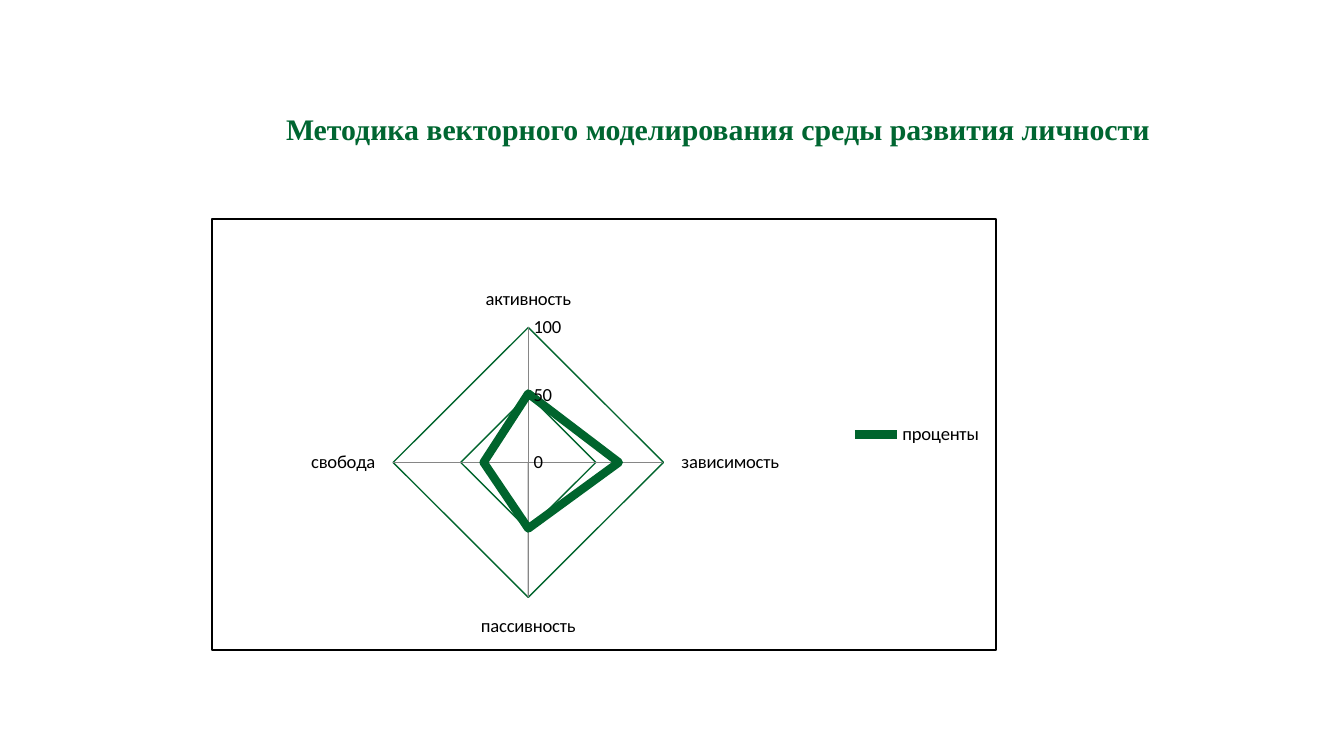
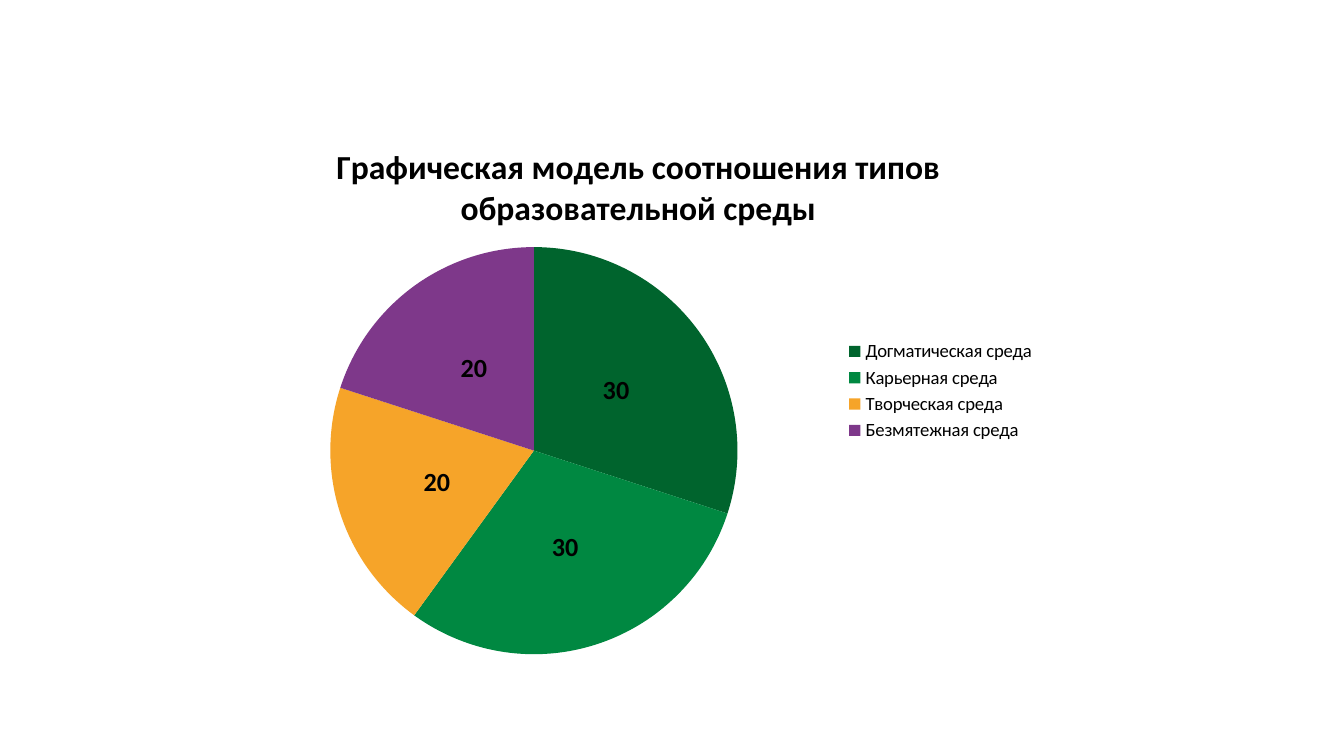
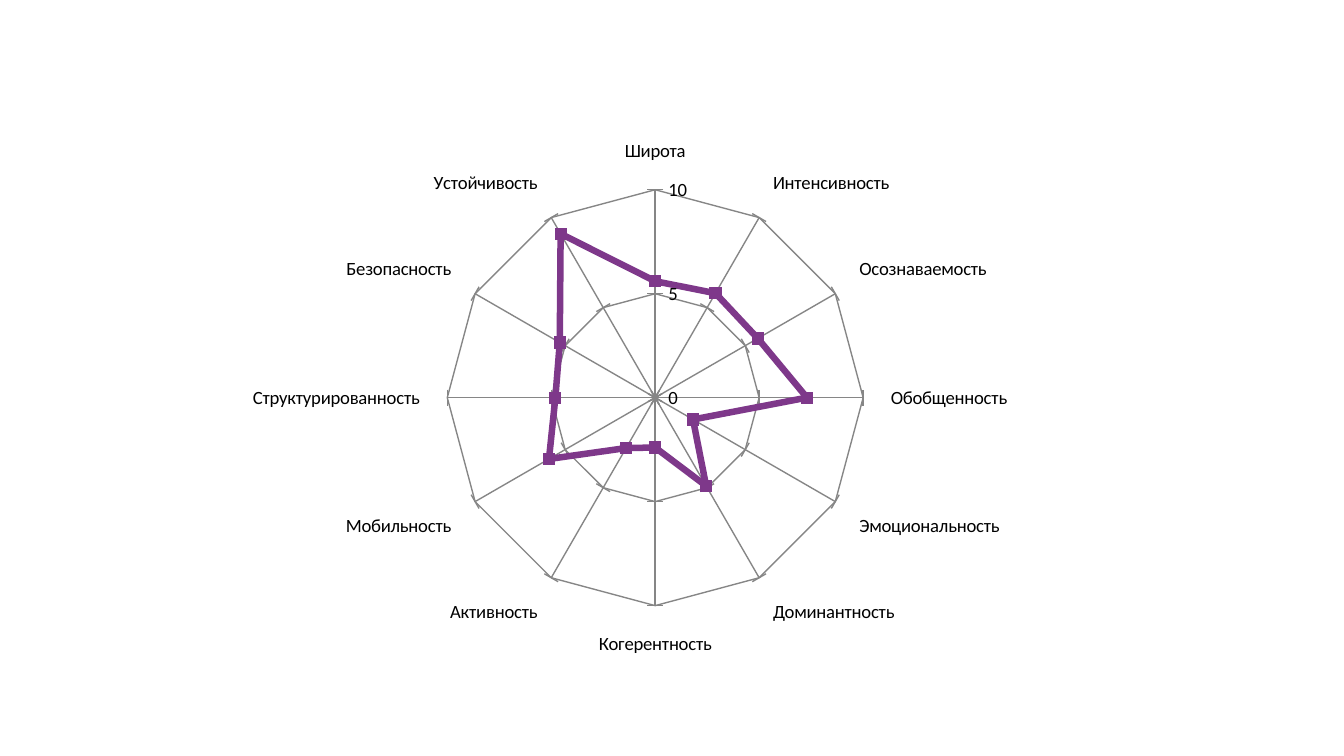
from lxml.etree import SubElement
from pptx import Presentation
from pptx.chart.data import CategoryChartData
from pptx.dml.color import RGBColor
from pptx.enum.chart import (XL_CHART_TYPE, XL_LABEL_POSITION, XL_LEGEND_POSITION,
                             XL_MARKER_STYLE, XL_TICK_MARK)
from pptx.enum.text import MSO_ANCHOR, MSO_AUTO_SIZE, PP_ALIGN
from pptx.oxml import parse_xml
from pptx.oxml.ns import nsdecls, qn
from pptx.util import Pt

EMU_PER_PX = 914400 / 134.4
TITLE_ONLY, BLANK = 5, 6

TITLE_FONT, CHART_FONT = "Times New Roman", "Calibri"
TITLE_GREEN = "006631"
BLACK, GRAY = "000000", "868686"
DARK_GREEN, GREEN, ORANGE, PURPLE = "00642D", "008841", "F6A429", "7E388A"


def px(length):
    return round(length * EMU_PER_PX)


def color(hex_string):
    return RGBColor.from_string(hex_string)


def format_line(line, hex_string, width):
    line.color.rgb = color(hex_string)
    line.width = Pt(width)


def set_layout(parent, **fractions):
    """Place a chart part by fractions of the chart (x, y and optionally w, h)."""
    layout = parent.find(qn("c:layout"))
    if layout is None:
        layout = parse_xml(f"<c:layout {nsdecls('c')}/>")
        parent.insert(0, layout)
    manual = SubElement(layout, qn("c:manualLayout"))
    if "w" in fractions:
        SubElement(manual, qn("c:layoutTarget")).set("val", "inner")
    for axis in "xy":
        SubElement(manual, qn(f"c:{axis}Mode")).set("val", "edge")
    for name, value in fractions.items():
        SubElement(manual, qn(f"c:{name}")).set("val", f"{value:.3f}")


def set_frame(chart, border):
    if border:
        line = (f'<a:ln w="{Pt(1)}"><a:solidFill><a:srgbClr val="{border}"/>'
                "</a:solidFill></a:ln>")
    else:
        line = "<a:ln><a:noFill/></a:ln>"
    properties = parse_xml(f"<c:spPr {nsdecls('c', 'a')}><a:noFill/>{line}</c:spPr>")
    chart.element.find(qn("c:chart")).addnext(properties)


def add_chart(slide, chart_type, box, plot_box, name, values, legend=False, border=None):
    """Add a one-series chart; plot_box is relative to the corner of box."""
    data = CategoryChartData()
    data.categories = list(values)
    data.add_series(name, list(values.values()))
    chart = slide.shapes.add_chart(chart_type, *map(px, box), data).chart
    chart.font.name = CHART_FONT
    chart.font.size = Pt(10)
    chart.font.color.rgb = color(BLACK)
    chart.has_title = False
    chart.has_legend = legend
    if legend:
        chart.legend.position = XL_LEGEND_POSITION.RIGHT
        chart.legend.include_in_layout = False
    set_frame(chart, border)
    left, top, width, height = plot_box
    set_layout(chart.element.find(".//" + qn("c:plotArea")), x=left / box[2],
               y=top / box[3], w=width / box[2], h=height / box[3])
    return chart


def format_radar(chart, maximum, grid, line, line_width, category_tick, value_tick):
    chart.plots[0].vary_by_categories = False
    category_axis, value_axis = chart.category_axis, chart.value_axis
    value_axis.minimum_scale = 0
    value_axis.maximum_scale = maximum
    value_axis.major_unit = maximum / 2
    for axis, tick in ((category_axis, category_tick), (value_axis, value_tick)):
        axis.major_tick_mark = tick
        axis.minor_tick_mark = XL_TICK_MARK.NONE
        axis.tick_labels.number_format = "General"
        axis.tick_labels.number_format_is_linked = False
        axis.has_major_gridlines = True
        format_line(axis.major_gridlines.format.line, grid, 0.75)
        format_line(axis.format.line, GRAY, 0.75)
    format_line(chart.series[0].format.line, line, line_width)


def format_title(title, text):
    title.left, title.top, title.width, title.height = map(px, (47, 105, 1243, 39))
    frame = title.text_frame
    frame.text = text
    frame.word_wrap = True
    frame.auto_size = MSO_AUTO_SIZE.SHAPE_TO_FIT_TEXT
    frame.vertical_anchor = MSO_ANCHOR.TOP
    frame.margin_left = frame.margin_top = frame.margin_right = frame.margin_bottom = 0
    paragraph = frame.paragraphs[0]
    properties = paragraph._p.get_or_add_pPr()
    properties.set("marL", str(px(99)))
    properties.set("indent", "0")
    paragraph.alignment = PP_ALIGN.CENTER
    paragraph.line_spacing = 1.15
    paragraph.space_before = Pt(0)
    paragraph.space_after = Pt(10)
    paragraph.font.name = TITLE_FONT
    paragraph.font.size = Pt(16)
    paragraph.font.bold = True
    paragraph.font.color.rgb = color(TITLE_GREEN)


def add_vector_slide(presentation):
    slide = presentation.slides.add_slide(presentation.slide_layouts[TITLE_ONLY])
    format_title(slide.shapes.title, "Методика векторного моделирования среды развития личности")
    values = {"активность": 51, "зависимость": 67, "пассивность": 49, "свобода": 33}
    chart = add_chart(slide, XL_CHART_TYPE.RADAR, (211, 218, 786, 433),
                      (169, 109, 296, 271), "проценты", values, legend=True, border=BLACK)
    format_radar(chart, 100, DARK_GREEN, DARK_GREEN, 4.5,
                 XL_TICK_MARK.NONE, XL_TICK_MARK.NONE)


def add_environment_slide(presentation):
    slide = presentation.slides.add_slide(presentation.slide_layouts[BLANK])
    heading = "Графическая модель соотношения типов образовательной среды"
    values = {"Догматическая среда": 30, "Карьерная среда": 30,
              "Творческая среда": 20, "Безмятежная среда": 20}
    chart = add_chart(slide, XL_CHART_TYPE.PIE, (223, 109, 826, 564),
                      (107, 138, 407, 407), heading, values, legend=True)

    chart.has_title = True
    title = chart.chart_title
    title.include_in_layout = False
    title.text_frame.text = heading
    font = title.text_frame.paragraphs[0].font
    font.name, font.size, font.bold = CHART_FONT, Pt(18), True
    font.color.rgb = color(BLACK)
    set_layout(title.element, x=0.13, y=0.05)

    plot = chart.plots[0]
    plot.vary_by_categories = True
    for index, fill_color in enumerate((DARK_GREEN, GREEN, ORANGE, PURPLE)):
        fill = plot.series[0].points[index].format.fill
        fill.solid()
        fill.fore_color.rgb = color(fill_color)
    plot.has_data_labels = True
    labels = plot.data_labels
    labels.show_value = True
    labels.show_percentage = False
    labels.number_format = "0"
    labels.number_format_is_linked = False
    labels.position = XL_LABEL_POSITION.CENTER
    labels.font.size = Pt(14)
    labels.font.bold = True


def add_characteristics_slide(presentation):
    slide = presentation.slides.add_slide(presentation.slide_layouts[BLANK])
    values = {
        "Широта": 5.6, "Интенсивность": 5.8, "Осознаваемость": 5.7,
        "Обобщенность": 7.3, "Эмоциональность": 2.1, "Доминантность": 4.9,
        "Когерентность": 2.4, "Активность": 2.8, "Мобильность": 5.9,
        "Структурированность": 4.8, "Безопасность": 5.3, "Устойчивость": 9.1,
    }
    chart = add_chart(slide, XL_CHART_TYPE.RADAR_MARKERS, (169, 122, 921, 551),
                      (278, 68, 416, 416), "Series 1", values)
    format_radar(chart, 10, GRAY, PURPLE, 3.5, XL_TICK_MARK.OUTSIDE, XL_TICK_MARK.CROSS)
    marker = chart.series[0].marker
    marker.style = XL_MARKER_STYLE.SQUARE
    marker.size = 6
    marker.format.fill.solid()
    marker.format.fill.fore_color.rgb = color(PURPLE)
    format_line(marker.format.line, PURPLE, 0.75)


def main():
    presentation = Presentation()
    presentation.slide_width, presentation.slide_height = px(1344), px(756)
    add_vector_slide(presentation)
    add_environment_slide(presentation)
    add_characteristics_slide(presentation)
    presentation.save("out.pptx")


if __name__ == "__main__":
    main()
